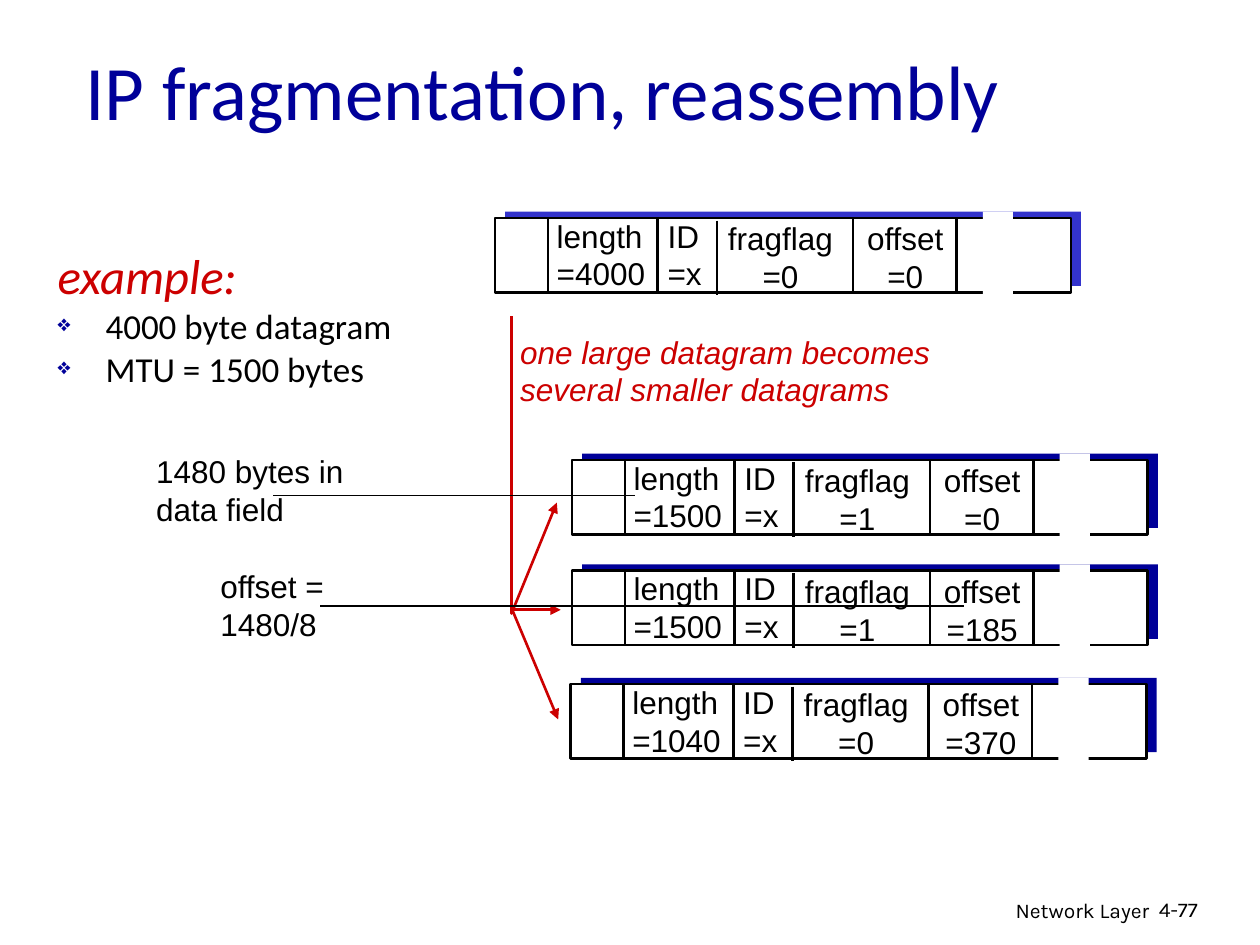
from lxml.etree import SubElement
from pptx import Presentation
from pptx.dml.color import RGBColor
from pptx.enum.shapes import MSO_CONNECTOR, MSO_SHAPE
from pptx.enum.text import MSO_ANCHOR, MSO_AUTO_SIZE, PP_ALIGN
from pptx.oxml.ns import qn
from pptx.util import Emu, Pt

SCALE = 9144  # EMU in one px, 100 px to the inch
BLACK = RGBColor(0x00, 0x00, 0x00)
WHITE = RGBColor(0xFF, 0xFF, 0xFF)
NAVY = RGBColor(0x00, 0x00, 0x99)
BLUE = RGBColor(0x33, 0x33, 0xCC)
RED = RGBColor(0xCC, 0x00, 0x00)
LEFT, CENTER, RIGHT = PP_ALIGN.LEFT, PP_ALIGN.CENTER, PP_ALIGN.RIGHT


def px(*nums):
    return [Emu(n * SCALE) for n in nums]


def write(frame, text, size=18, font="Arial", color=BLACK, italic=False,
          align=LEFT, wrap=False):
    """Fill a text frame, one paragraph for each line of text."""
    frame.word_wrap = wrap
    if not wrap:
        frame.auto_size = MSO_AUTO_SIZE.SHAPE_TO_FIT_TEXT
    frame.text = text
    for para in frame.paragraphs:
        para.alignment = align
        for run in para.runs:
            run.font.size = Pt(size)
            run.font.name = font
            run.font.italic = italic
            run.font.color.rgb = color
    return frame


def label(slide, box, text, **form):
    return write(slide.shapes.add_textbox(*px(*box)).text_frame, text, **form)


def rect(slide, box, fill, line=None):
    shape = slide.shapes.add_shape(MSO_SHAPE.RECTANGLE, *px(*box))
    shape.shadow.inherit = False
    shape.fill.solid()
    shape.fill.fore_color.rgb = fill
    if line is None:
        shape.line.fill.background()
    else:
        shape.line.color.rgb = line
        shape.line.width = Pt(1.5)


def stroke(shape, color, width, arrow):
    shape.line.color.rgb = color
    shape.line.width = Pt(width)
    if arrow:
        SubElement(shape.line._get_or_add_ln(), qn("a:tailEnd"), type="triangle")


def rule(slide, ends, color=BLACK, width=1.5, arrow=False):
    line = slide.shapes.add_connector(MSO_CONNECTOR.STRAIGHT, *px(*ends))
    stroke(line, color, width, arrow)
    SubElement(line._element.spPr, qn("a:effectLst"))


def bullet(para):
    props = para._p.get_or_add_pPr()
    tint = SubElement(props, qn("a:buClr"))
    SubElement(tint, qn("a:srgbClr"), val=str(NAVY))
    SubElement(props, qn("a:buSzPct"), val="65000")
    SubElement(props, qn("a:buChar"), char="❖")


def heading(slide, box):
    title = slide.shapes.title
    title.left, title.top, title.width, title.height = px(*box)
    write(title.text_frame, "IP fragmentation, reassembly", size=44,
          font="Calibri", color=NAVY, wrap=True)
    title.text_frame.vertical_anchor = MSO_ANCHOR.MIDDLE


def example(slide, box):
    frame = label(slide, box, "example:\n4000 byte datagram\nMTU = 1500 bytes",
                  size=20, font="Calibri", wrap=True)
    for para in frame.paragraphs:
        props = para._p.get_or_add_pPr()
        props.set("marL", str(38 * SCALE))
        props.set("indent", str(-38 * SCALE))
        para.line_spacing = 0.85
        para.space_before = Pt(4)
    head, *items = frame.paragraphs
    head.space_before = Pt(5.6)
    font = head.runs[0].font
    font.size, font.italic, font.color.rgb = Pt(28), True, RED
    for para in items:
        bullet(para)


def datagram(slide, x, y, shade, length, flag, offset):
    """Draw one datagram whose front box has its corner at x, y."""
    rect(slide, (x + 8, y - 5, 457, 59), shade)
    rect(slide, (x, y, 457, 59), WHITE, BLACK)
    # Fields: left, drop, width, text, alignment
    fields = [(39, -6, 92, f"length\n={length}", LEFT),
              (127, -6, 49, f"ID\n=x", LEFT),
              (173, -4, 107, f"fragflag\n={flag}", CENTER),
              (284, -4, 83, f"offset\n={offset}", CENTER)]
    for left, drop, width, text, align in fields:
        label(slide, (x + left, y + drop, width, 70), text, align=align)
    # Dividers, the third one set a little lower
    for left, drop in [(42, 0), (129, 0), (176, 2), (284, 0), (366, 0)]:
        rule(slide, (x + left, y + drop, x + left, y + drop + 59))
    # Gap in the data field
    rect(slide, (x + 387, y - 5, 24, 66), WHITE)


def split(slide, x, y):
    """Draw the trunk that falls from x, y and its three arrows."""
    path = slide.shapes.build_freeform(x, y, scale=SCALE)
    path.add_line_segments([(x, y + 236), (x + 36, y + 148)], close=False)
    trunk = path.convert_to_shape()
    trunk.shadow.inherit = False
    trunk.fill.background()
    stroke(trunk, RED, 1.5, True)
    rule(slide, (x, y + 233, x + 39, y + 233), RED, arrow=True)
    rule(slide, (x + 1, y + 234, x + 37, y + 320), RED, arrow=True)
    label(slide, (x - 3, y + 8, 345, 70),
          "one large datagram becomes\nseveral smaller datagrams",
          color=RED, italic=True)


def notes(slide, x, y):
    """Place the two remarks and their pointer lines."""
    label(slide, (x, y, 176, 70), "1480 bytes in \vdata field")
    label(slide, (x + 51, y + 91, 103, 70), "offset =\n1480/8")
    rule(slide, (x + 103, y + 39, x + 390, y + 39), width=0.75)
    rule(slide, (x + 651, y + 127, x + 140, y + 127), width=0.75)


def footer(slide, x, y):
    label(slide, (x, y, 317, 31), "Network Layer", size=12, font="Karla",
          align=RIGHT, wrap=True)
    label(slide, (x + 305, y, 74, 30), "4-77", size=12, font="Karla", wrap=True)


def main():
    deck = Presentation()
    deck.slide_width, deck.slide_height = px(1000, 750)
    slide = deck.slides.add_slide(deck.slide_layouts[5])
    heading(slide, (58, 20, 850, 102))
    footer(slide, 605, 707)
    datagram(slide, 393, 173, BLUE, 4000, 0, 0)
    parts = [(454, 365, 1500, 1, 0), (454, 453, 1500, 1, 185),
             (453, 543, 1040, 0, 370)]
    for x, y, length, flag, offset in parts:
        datagram(slide, x, y, NAVY, length, flag, offset)
    split(slide, 406, 251)
    example(slide, (36, 197, 310, 184))
    notes(slide, 114, 354)
    deck.save("out.pptx")


if __name__ == "__main__":
    main()
